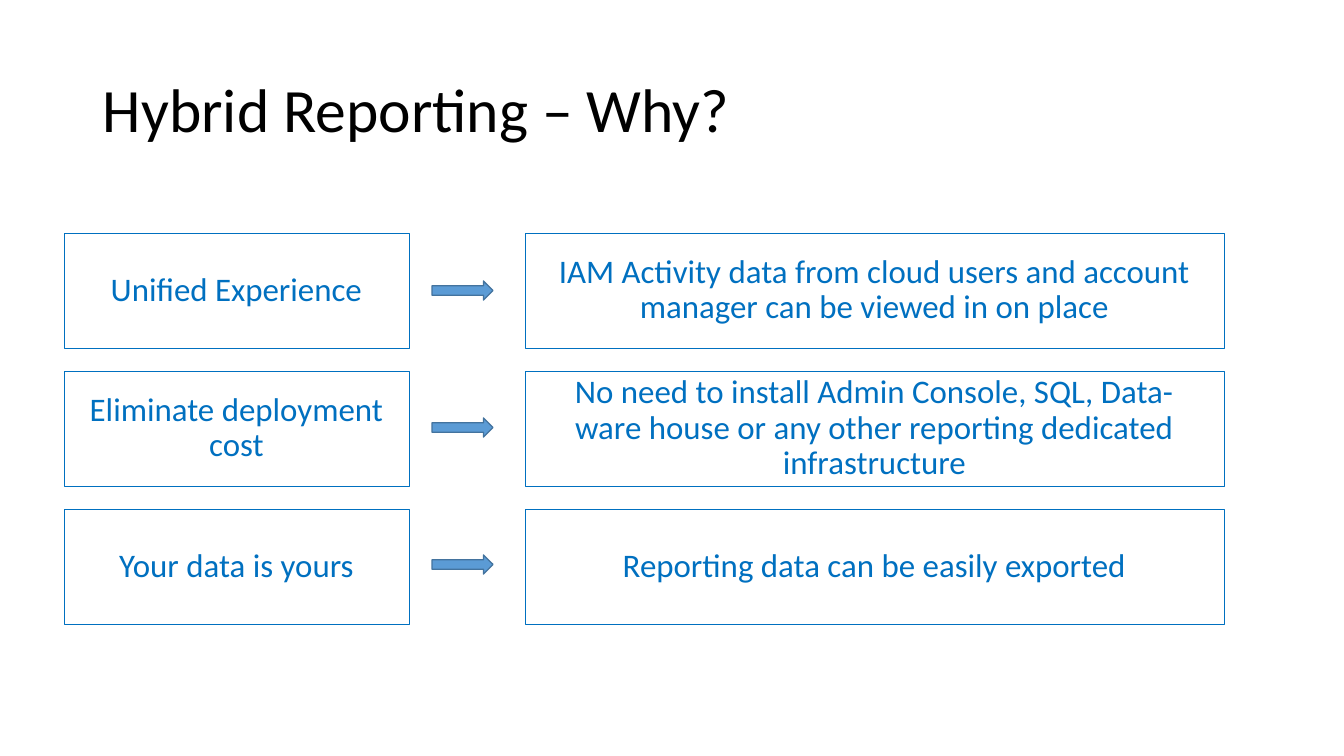
from pptx import Presentation
from pptx.dml.color import RGBColor
from pptx.enum.shapes import MSO_SHAPE
from pptx.enum.text import MSO_ANCHOR, PP_ALIGN
from pptx.util import Emu, Pt

BLACK = RGBColor(0x00, 0x00, 0x00)
BOX_BLUE = RGBColor(0x00, 0x70, 0xC0)
ARROW_FILL = RGBColor(0x5B, 0x9B, 0xD5)
ARROW_LINE = RGBColor(0x43, 0x73, 0x9E)

PIXELS_PER_INCH = 100.8
ROW_TOP = 233
ROW_STEP = 138
BOX_HEIGHT = 115
ARROW_TOP = 281
ARROW_STEP = 137

REASONS = [
    ("Unified Experience",
     "IAM Activity data from cloud users and account manager can be viewed in on place"),
    ("Eliminate deployment cost",
     "No need to install Admin Console, SQL, Data-ware house or any other "
     "reporting dedicated infrastructure"),
    ("Your data is yours", "Reporting data can be easily exported"),
]
COLUMNS = [(64, 345), (525, 699)]


def px(length):
    return Emu(round(length * 914400 / PIXELS_PER_INCH))


def write_text(shape, text, size, color, alignment):
    text_frame = shape.text_frame
    text_frame.text = text
    text_frame.word_wrap = True
    text_frame.vertical_anchor = MSO_ANCHOR.MIDDLE
    paragraph = text_frame.paragraphs[0]
    paragraph.alignment = alignment
    paragraph.line_spacing = 0.9
    font = paragraph.runs[0].font
    font.name = "Calibri"
    font.size = Pt(size)
    font.color.rgb = color


presentation = Presentation()
presentation.slide_width = px(1344)
presentation.slide_height = px(756)
slide = presentation.slides.add_slide(presentation.slide_layouts[6])

title = slide.shapes.add_textbox(px(93), px(40), px(1159), px(146))
write_text(title, "Hybrid Reporting – Why?", 44, BLACK, PP_ALIGN.LEFT)

for row, texts in enumerate(REASONS):
    for (left, width), text in zip(COLUMNS, texts):
        box = slide.shapes.add_shape(
            MSO_SHAPE.RECTANGLE, px(left), px(ROW_TOP + row * ROW_STEP),
            px(width), px(BOX_HEIGHT))
        box.shadow.inherit = False
        box.fill.background()
        box.line.color.rgb = BOX_BLUE
        box.line.width = Pt(0.5)
        write_text(box, text, 23.5, BOX_BLUE, PP_ALIGN.CENTER)
        text_frame = box.text_frame
        text_frame.margin_left = text_frame.margin_right = px(20)
        text_frame.margin_top = text_frame.margin_bottom = px(16)

    arrow = slide.shapes.add_shape(
        MSO_SHAPE.RIGHT_ARROW, px(432), px(ARROW_TOP + row * ARROW_STEP),
        px(61), px(19))
    arrow.shadow.inherit = False
    arrow.fill.solid()
    arrow.fill.fore_color.rgb = ARROW_FILL
    arrow.line.color.rgb = ARROW_LINE
    arrow.line.width = Pt(1)

presentation.save("out.pptx")
